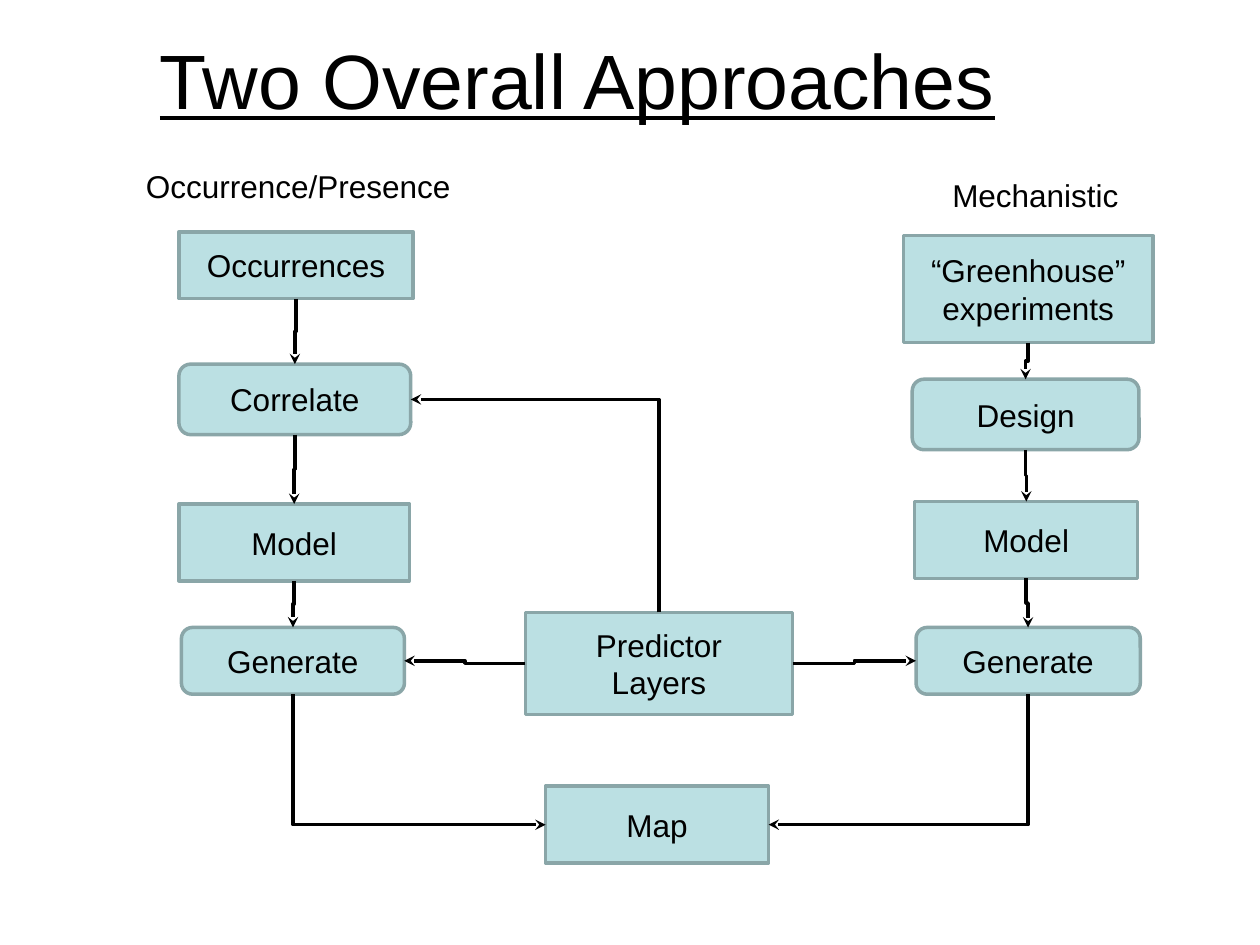
from dataclasses import dataclass
from itertools import pairwise

from lxml.etree import SubElement
from pptx import Presentation
from pptx.dml.color import RGBColor
from pptx.enum.shapes import MSO_CONNECTOR, MSO_SHAPE
from pptx.enum.text import MSO_ANCHOR, PP_ALIGN
from pptx.oxml.ns import qn
from pptx.util import Inches, Pt

TOP, LEFT, BOTTOM, RIGHT = range(4)


@dataclass(frozen=True)
class Theme:
    font: str = "Arial"
    ink: str = "000000"
    fill: str = "BBE0E3"
    edge: str = "8AA6A8"
    title_size: int = 44
    body_size: int = 18
    line_width: int = 2


def write(tf, text, theme, size=None, align=PP_ALIGN.LEFT,
          anchor=MSO_ANCHOR.TOP, underline=None, wrap=True):
    """Fill a text frame, one paragraph for each line of text."""
    tf.word_wrap = wrap
    tf.vertical_anchor = anchor
    for i, line in enumerate(text.split("\n")):
        p = tf.paragraphs[0] if i == 0 else tf.add_paragraph()
        p.alignment = align
        r = p.add_run()
        r.text = line
        r.font.name = theme.font
        r.font.size = Pt(size or theme.body_size)
        r.font.underline = underline
        r.font.color.rgb = RGBColor.from_string(theme.ink)


class FlowSlide:
    """A slide on a grid of 100 columns by 75 rows."""

    def __init__(self, prs, theme):
        self.theme = theme
        self.s = prs.slides.add_slide(prs.slide_layouts[6])
        self.col = prs.slide_width / 100
        self.row = prs.slide_height / 75

    def place(self, x, y, w, h):
        return (round(x * self.col), round(y * self.row),
                round(w * self.col), round(h * self.row))

    def label(self, text, *at, **fmt):
        sp = self.s.shapes.add_textbox(*self.place(*at))
        write(sp.text_frame, text, self.theme, **fmt)

    def box(self, text, *at, rounded=False):
        kind = MSO_SHAPE.ROUNDED_RECTANGLE if rounded else MSO_SHAPE.RECTANGLE
        sp = self.s.shapes.add_shape(kind, *self.place(*at))
        sp.shadow.inherit = False
        sp.fill.solid()
        sp.fill.fore_color.rgb = RGBColor.from_string(self.theme.fill)
        sp.line.color.rgb = RGBColor.from_string(self.theme.edge)
        sp.line.width = Pt(self.theme.line_width)
        write(sp.text_frame, text, self.theme, align=PP_ALIGN.CENTER,
              anchor=MSO_ANCHOR.MIDDLE)
        return sp

    def arrow(self, start, start_side, end, end_side):
        cxn = self.s.shapes.add_connector(MSO_CONNECTOR.ELBOW, 0, 0, 0, 0)
        cxn.begin_connect(start, start_side)
        cxn.end_connect(end, end_side)
        cxn.line.color.rgb = RGBColor.from_string(self.theme.ink)
        cxn.line.width = Pt(self.theme.line_width)
        spPr = cxn._element.spPr
        if start_side in (TOP, BOTTOM):
            self.start_vertically(cxn, spPr.find(qn("a:xfrm")))
            if end_side in (LEFT, RIGHT):
                spPr.find(qn("a:prstGeom")).set("prst", "bentConnector2")
        SubElement(spPr.find(qn("a:ln")), qn("a:tailEnd"), type="stealth")
        SubElement(spPr, qn("a:effectLst"))

    @staticmethod
    def start_vertically(cxn, xfrm):
        """Turn an elbow by a quarter so that its first leg is vertical."""
        x, y = cxn.begin_x, cxn.begin_y
        dx, dy = cxn.end_x - x, cxn.end_y - y
        cxn.width, cxn.height = abs(dy), abs(dx)
        cxn.left = round(x + dx / 2 - abs(dy) / 2)
        cxn.top = round(y + dy / 2 - abs(dx) / 2)
        xfrm.set("rot", str((90 if dy > 0 else 270) * 60000))
        xfrm.set("flipH", "0")
        xfrm.set("flipV", "1" if (dx > 0) == (dy > 0) else "0")


def main():
    prs = Presentation()
    prs.slide_width, prs.slide_height = Inches(10), Inches(7.5)
    theme = Theme()
    flow = FlowSlide(prs, theme)

    # Title and column headings
    flow.label("Two Overall Approaches", 11.7, 0, 86.7, 12.5,
               size=theme.title_size, underline=True, anchor=MSO_ANCHOR.MIDDLE)
    flow.label("Occurrence/Presence", 10.6, 12.8, 26.4, 4, wrap=False)
    flow.label("Mechanistic", 74.6, 13.5, 15.3, 4, wrap=False)

    # Left and right chains of steps
    occurrence = [
        flow.box("Occurrences", 14.2, 18.4, 18.6, 5.3),
        flow.box("Correlate", 14.2, 28.9, 18.4, 5.6, rounded=True),
        flow.box("Model", 14.2, 40, 18.3, 6.1),
        flow.box("Generate", 14.4, 49.8, 17.7, 5.3, rounded=True),
    ]
    mechanistic = [
        flow.box("“Greenhouse” experiments", 71.7, 18.7, 19.8, 8.5),
        flow.box("Design", 72.4, 30.1, 18, 5.6, rounded=True),
        flow.box("Model", 72.6, 39.8, 17.7, 6.1),
        flow.box("Generate", 72.7, 49.8, 17.8, 5.3, rounded=True),
    ]

    # Shared input and result
    layers = flow.box("Predictor\nLayers", 41.7, 48.6, 21.2, 8.1)
    result = flow.box("Map", 43.3, 62.4, 17.7, 6.1)

    # Arrows down each chain, from the layers and to the map
    for chain, inner, outer in ((occurrence, RIGHT, LEFT),
                                (mechanistic, LEFT, RIGHT)):
        for upper, lower in pairwise(chain):
            flow.arrow(upper, BOTTOM, lower, TOP)
        flow.arrow(layers, outer, chain[-1], inner)
        flow.arrow(chain[-1], BOTTOM, result, outer)
    flow.arrow(layers, TOP, occurrence[1], RIGHT)

    prs.save("out.pptx")


if __name__ == "__main__":
    main()
